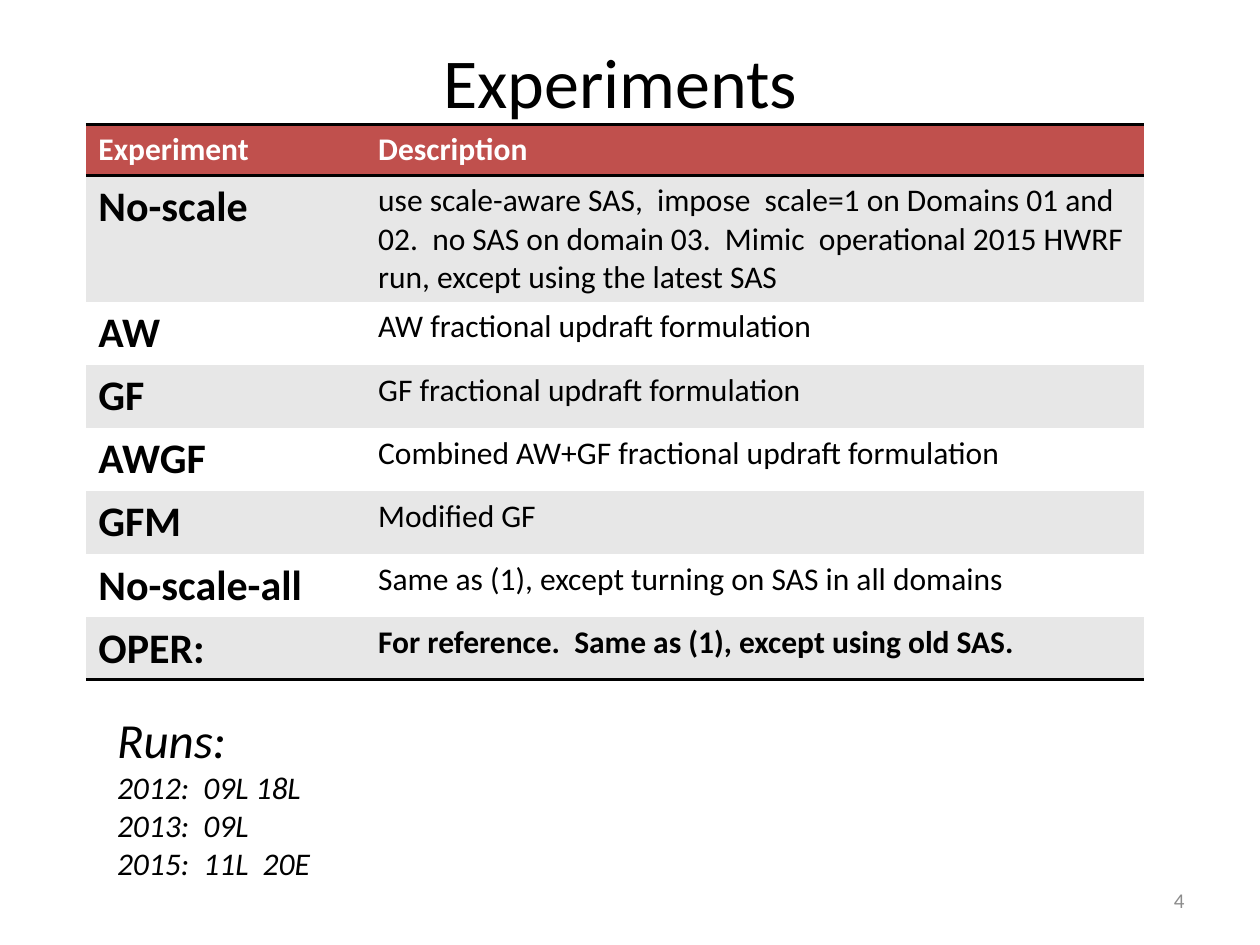
from lxml.etree import SubElement
from pptx import Presentation
from pptx.dml.color import RGBColor
from pptx.enum.text import MSO_ANCHOR, MSO_AUTO_SIZE, PP_ALIGN
from pptx.oxml.ns import qn
from pptx.util import Cm, Pt

BLACK = RGBColor(0x00, 0x00, 0x00)
WHITE = RGBColor(0xFF, 0xFF, 0xFF)
RED = RGBColor(0xC0, 0x50, 0x4D)
BAND = RGBColor(0xE7, 0xE7, 0xE7)
GRAY = RGBColor(0x8C, 0x8C, 0x8C)
PLAIN_TABLE_STYLE = "{2D5ABB26-0587-4C30-8999-92F81FD0307C}"

HEADER = ("Experiment", "Description")
EXPERIMENTS = [
    ("No-scale", "use scale-aware SAS,  impose  scale=1 on Domains 01 and 02.  "
     "no SAS on domain 03.  Mimic  operational 2015 HWRF run, except using the latest SAS"),
    ("AW", "AW fractional updraft formulation"),
    ("GF", "GF fractional updraft formulation"),
    ("AWGF", "Combined AW+GF fractional updraft formulation"),
    ("GFM", "Modified GF"),
    ("No-scale-all", "Same as (1), except turning on SAS in all domains"),
    ("OPER:", "For reference.  Same as (1), except using old SAS."),
]
RUNS = ["2012:  09L 18L", "2013:  09L", "2015:  11L  20E"]


class SlideBuilder:
    font_name = "Calibri"

    def __init__(self, deck):
        self.slide = deck.slides.add_slide(deck.slide_layouts[5])

    def set_text(self, paragraph, text, size, color=BLACK, bold=False, italic=False,
                 align=PP_ALIGN.LEFT):
        paragraph.text = text
        paragraph.alignment = align
        font = paragraph.font
        font.name = self.font_name
        font.size = Pt(size)
        font.color.rgb = color
        font.bold = bold
        font.italic = italic

    def title(self, text, left, top, width, height):
        title = self.slide.shapes.title
        title.left, title.top = Cm(left), Cm(top)
        title.width, title.height = Cm(width), Cm(height)
        frame = title.text_frame
        frame.vertical_anchor = MSO_ANCHOR.TOP
        frame.auto_size = MSO_AUTO_SIZE.SHAPE_TO_FIT_TEXT
        self.set_text(frame.paragraphs[0], text, 40, align=PP_ALIGN.CENTER)

    def text_box(self, lines, left, top, width, height, anchor=MSO_ANCHOR.TOP, **style):
        box = self.slide.shapes.add_textbox(Cm(left), Cm(top), Cm(width), Cm(height))
        frame = box.text_frame
        frame.word_wrap = True
        frame.vertical_anchor = anchor
        for index, (text, size) in enumerate(lines):
            paragraph = frame.add_paragraph() if index else frame.paragraphs[0]
            self.set_text(paragraph, text, size, **style)

    def cell(self, cell, text, size, fill, color=BLACK, bold=False, borders=()):
        self.set_text(cell.text_frame.paragraphs[0], text, size, color, bold)
        properties = cell._tc.get_or_add_tcPr()
        for side in borders:
            line = SubElement(properties, qn(f"a:{side}"), w=str(Pt(2)))
            solid = SubElement(line, qn("a:solidFill"))
            SubElement(solid, qn("a:srgbClr"), val=str(BLACK))
        cell.fill.solid()
        cell.fill.fore_color.rgb = fill

    def table(self, header, rows, left, top, widths, heights):
        frame = self.slide.shapes.add_table(
            len(rows) + 1, len(header), Cm(left), Cm(top), Cm(sum(widths)), Cm(sum(heights)))
        table = frame.table
        table._tbl.tblPr.find(qn("a:tableStyleId")).text = PLAIN_TABLE_STYLE
        table.horz_banding = False
        for column, width in zip(table.columns, widths):
            column.width = Cm(width)
        for row, height in zip(table.rows, heights):
            row.height = Cm(height)
        for column, text in enumerate(header):
            self.cell(table.cell(0, column), text, 18, RED, WHITE, True, ("lnT", "lnB"))
        for number, (name, description) in enumerate(rows, start=1):
            fill = BAND if number % 2 else WHITE
            last = number == len(rows)
            borders = ("lnB",) if last else ()
            self.cell(table.cell(number, 0), name, 24, fill, bold=True, borders=borders)
            self.cell(table.cell(number, 1), description, 18, fill, bold=last, borders=borders)


def main():
    deck = Presentation()
    deck.slide_width, deck.slide_height = Cm(25.4), Cm(19.05)
    page = SlideBuilder(deck)
    page.text_box([("4", 12)], 18.2, 17.65, 5.93, 1.01, MSO_ANCHOR.MIDDLE,
                  color=GRAY, align=PP_ALIGN.RIGHT)
    page.title("Experiments ", 1.65, 0.64, 22.02, 1.96)
    page.table(HEADER, EXPERIMENTS, 1.73, 2.51, (5.64, 15.7), [1.03, 2.54] + [1.27] * 6)
    page.text_box([("Runs:", 28)] + [(run, 18) for run in RUNS],
                  2.11, 14.17, 14.4, 3.76, italic=True)
    deck.save("out.pptx")


if __name__ == "__main__":
    main()
